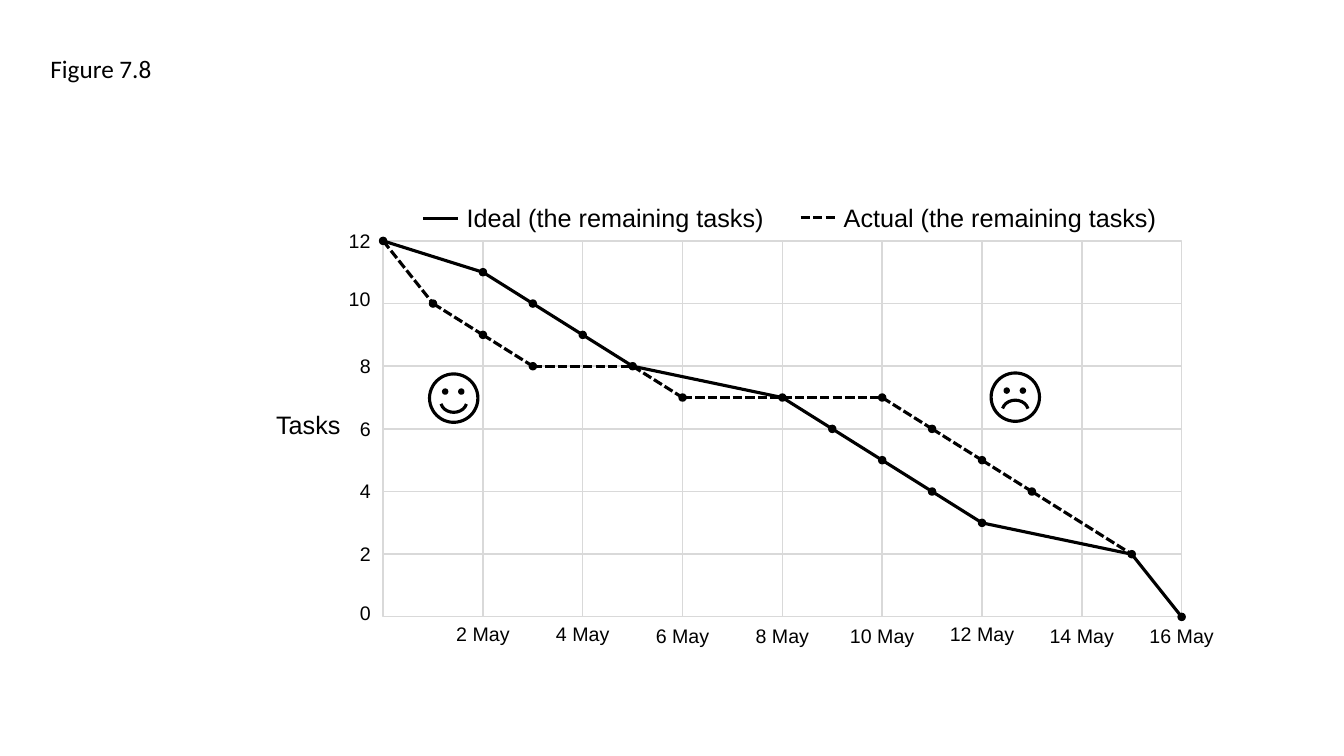
from dataclasses import dataclass
from itertools import pairwise

from lxml.etree import SubElement
from pptx import Presentation
from pptx.dml.color import RGBColor as RGB
from pptx.enum.dml import MSO_LINE as Dash
from pptx.enum.shapes import MSO_CONNECTOR as Link, MSO_SHAPE as Geo
from pptx.enum.text import MSO_ANCHOR as Anchor, MSO_AUTO_SIZE as Fit, PP_ALIGN as Align
from pptx.oxml.ns import qn
from pptx.util import Inches, Pt


@dataclass(frozen=True)
class Theme:
    ink: RGB = RGB(0, 0, 0)
    paper: RGB = RGB(255, 255, 255)
    grid: RGB = RGB(0xD9, 0xD9, 0xD9)
    font: str = "Arial"
    head: str = "Calibri"
    large: int = 18
    small: int = 14
    thin: float = 1
    thick: float = 2.25


# Plot area: 16 days across, 12 tasks down
LEFT, TOP = 3.8, 2.39
CELL_W, CELL_H = 0.99, 0.62
COLS, ROWS = 8, 6
BOTTOM = 6.12
STEP = (BOTTOM - TOP) / 12
DOT, EYE, FACE = 0.07, 0.05, 0.48

IDEAL = [(0, 12), (2, 11), (3, 10), (4, 9), (5, 8), (8, 7),
         (9, 6), (10, 5), (11, 4), (12, 3), (15, 2), (16, 0)]
ACTUAL = [(0, 12), (1, 10), (2, 9), (3, 8), (5, 8), (6, 7),
          (8, 7), (10, 7), (11, 6), (12, 5), (13, 4), (15, 2)]


def spot(day, tasks):
    """Slide position of a day and its remaining tasks."""
    return LEFT + day * CELL_W / 2, BOTTOM - tasks * STEP


class Page:
    def __init__(self, slide, theme):
        self.slide = slide
        self.theme = theme

    def shape(self, geo, x, y, w, h, line, width, fill=None, host=None):
        shapes = (host or self.slide).shapes
        item = shapes.add_shape(geo, Inches(x), Inches(y), Inches(w), Inches(h))
        item.shadow.inherit = False
        item.line.color.rgb = line
        item.line.width = Pt(width)
        if fill is None:
            item.fill.background()
        else:
            item.fill.solid()
            item.fill.fore_color.rgb = fill
        return item

    def disc(self, x, y, size, host=None):
        ink = self.theme.ink
        self.shape(Geo.OVAL, x, y, size, size, ink, self.theme.thin, ink, host)

    def line(self, start, end, dashed=False):
        ends = [Inches(v) for v in (*start, *end)]
        item = self.slide.shapes.add_connector(Link.STRAIGHT, *ends)
        item.line.color.rgb = self.theme.ink
        item.line.width = Pt(self.theme.thick)
        if dashed:
            item.line.dash_style = Dash.SQUARE_DOT
        SubElement(item.element.spPr, qn("a:effectLst"))

    def text(self, box, words, size, font, align):
        frame = box.text_frame
        frame.word_wrap = False
        frame.auto_size = Fit.SHAPE_TO_FIT_TEXT
        frame.vertical_anchor = Anchor.TOP
        para = frame.paragraphs[0]
        para.alignment = align
        run = para.add_run()
        run.text = words
        run.font.size = Pt(size)
        run.font.name = font
        run.font.color.rgb = self.theme.ink

    def label(self, words, x, y, w, h, size, align=Align.LEFT):
        box = self.slide.shapes.add_textbox(Inches(x), Inches(y), Inches(w), Inches(h))
        self.text(box, words, size, self.theme.font, align)

    def title(self, words, x, y, w, h):
        box = self.slide.shapes.title
        box.left, box.top = Inches(x), Inches(y)
        box.width, box.height = Inches(w), Inches(h)
        self.text(box, words, self.theme.large, self.theme.head, Align.LEFT)

    def grid(self):
        for row in range(ROWS):
            for col in range(COLS):
                self.shape(Geo.RECTANGLE, LEFT + col * CELL_W, TOP + row * (BOTTOM - TOP) / ROWS,
                           CELL_W, CELL_H, self.theme.grid, self.theme.thin)

    def axes(self):
        size = self.theme.small
        self.label("Tasks", 2.64, 4.01, 0.85, 0.4, self.theme.large)
        for tasks in range(0, 13, 2):
            w = 0.42 if tasks > 9 else 0.31
            lift = 0.04 if tasks in (0, 10) else 0
            y = spot(0, tasks)[1]
            self.label(str(tasks), 3.78 - w, y - 0.17 - lift, w, 0.34, size)
        for day in range(2, 17, 2):
            w = 0.84 if day > 9 else 0.73
            y = BOTTOM if day in (2, 4, 12) else BOTTOM + 0.02
            x = spot(day, 0)[0]
            self.label(f"{day} May", x - w / 2, y, w, 0.34, size, Align.CENTER)

    def series(self, points, marks, dashed=False):
        for start, end in pairwise(points):
            self.line(spot(*start), spot(*end), dashed)
        for point in marks:
            x, y = spot(*point)
            self.disc(x - DOT / 2, y - DOT / 2, DOT)

    def legend(self, words, x, y, w, dashed=False):
        self.line((x, y), (x + 0.34, y), dashed)
        self.label(words, x + 0.33, 1.96, w, 0.4, self.theme.large)

    def face(self, x, y, happy):
        look = self.theme
        group = self.slide.shapes.add_group_shape()
        self.shape(Geo.OVAL, x, y, FACE, FACE, look.ink, look.thick, look.paper, group)
        for dx in (0.13, 0.29):
            self.disc(x + dx, y + 0.15, EYE, group)
        dy = 0.16 if happy else 0.27
        mouth = self.shape(Geo.ARC, x + 0.11, y + dy, 0.26, 0.22,
                           look.ink, look.thick, host=group)
        mouth.adjustments[0], mouth.adjustments[1] = 115.384, 209.101
        mouth.rotation = 180 if happy else 0


def main():
    deck = Presentation()
    deck.slide_width, deck.slide_height = Inches(13.33), Inches(7.5)
    page = Page(deck.slides.add_slide(deck.slide_layouts[5]), Theme())
    page.title("Figure 7.8", 0.4, 0.48, 1.22, 0.4)
    page.grid()
    page.axes()
    page.series(IDEAL, IDEAL)
    page.legend("Ideal (the remaining tasks)", 4.2, 2.17, 3.26)
    page.series(ACTUAL, [p for p in ACTUAL if p not in IDEAL], dashed=True)
    page.legend("Actual (the remaining tasks)", 7.94, 2.16, 3.33, dashed=True)
    page.face(9.83, 3.7, happy=False)
    page.face(4.26, 3.71, happy=True)
    deck.save("out.pptx")


if __name__ == "__main__":
    main()
